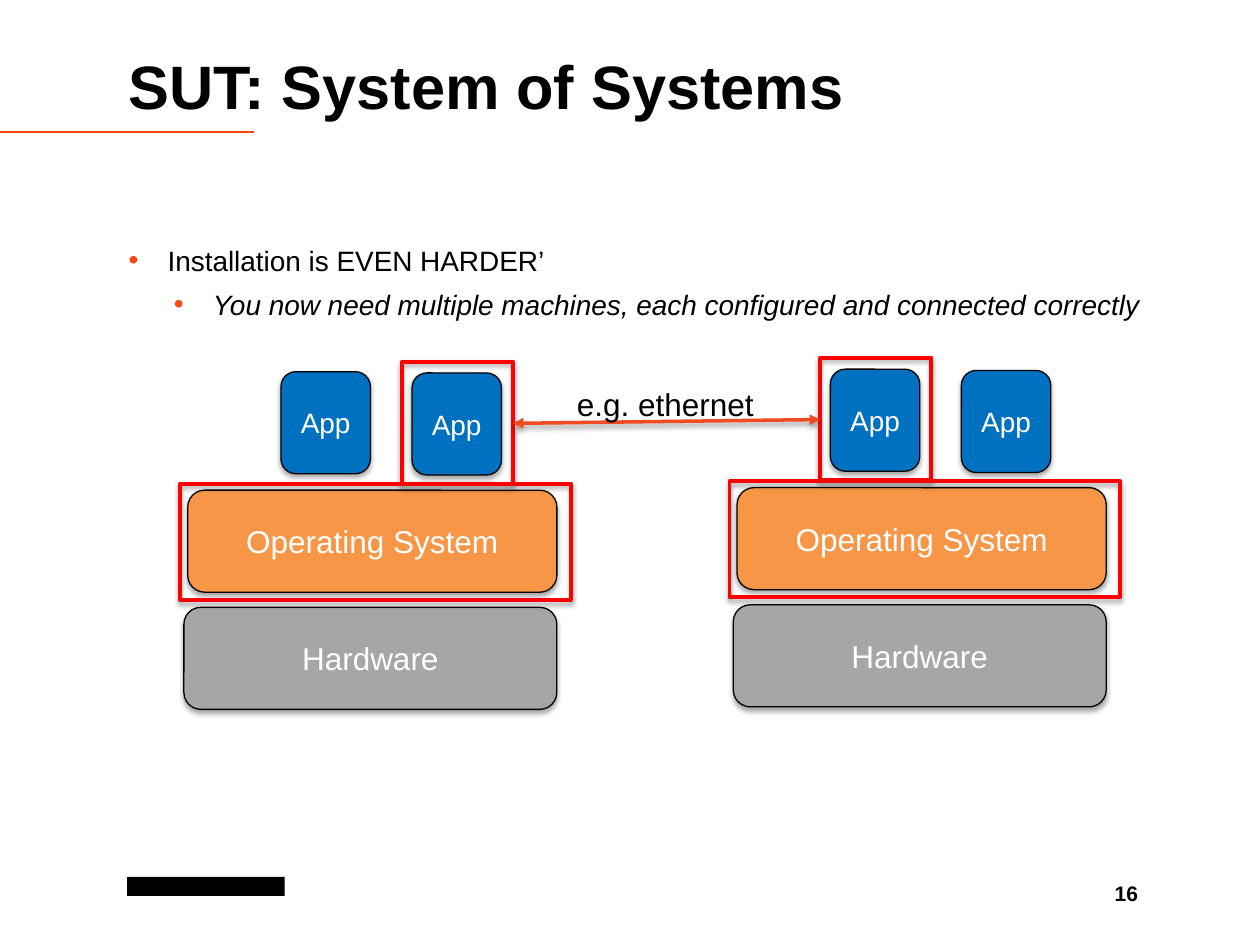
from lxml.etree import SubElement
from pptx import Presentation
from pptx.dml.color import RGBColor
from pptx.enum.shapes import MSO_CONNECTOR, MSO_SHAPE
from pptx.enum.text import MSO_ANCHOR, MSO_AUTO_SIZE, PP_ALIGN
from pptx.oxml.ns import qn
from pptx.util import Inches, Pt

FONT = "Arial"
BLACK = RGBColor(0x00, 0x00, 0x00)
WHITE = RGBColor(0xFF, 0xFF, 0xFF)
GRAY = RGBColor(0xA6, 0xA6, 0xA6)
AMBER = RGBColor(0xF7, 0x96, 0x46)
BLUE = RGBColor(0x00, 0x70, 0xC0)
RED = RGBColor(0xFF, 0x00, 0x00)
RULE = RGBColor(0xFF, 0x46, 0x12)
LINK = RGBColor(0xF0, 0x4B, 0x23)


def place(shape, x, y, w, h):
    shape.left, shape.top = Inches(x), Inches(y)
    shape.width, shape.height = Inches(w), Inches(h)


def style(para, size, color=BLACK, bold=False, italic=False):
    for run in para.runs:
        font = run.font
        font.name, font.size = FONT, Pt(size)
        font.bold, font.italic = bold, italic
        font.color.rgb = color


def inset(frame, left, top, right, bottom):
    frame.margin_left, frame.margin_top = Inches(left), Inches(top)
    frame.margin_right, frame.margin_bottom = Inches(right), Inches(bottom)


def shade(shape, alpha=35):
    """Soft shadow straight below the shape."""
    effects = SubElement(shape._element.spPr, qn("a:effectLst"))
    outer = SubElement(effects, qn("a:outerShdw"), blurRad=str(Pt(3.1)),
                       dist=str(Pt(1.8)), dir="5400000", rotWithShape="0")
    tone = SubElement(outer, qn("a:srgbClr"), val=str(BLACK))
    SubElement(tone, qn("a:alpha"), val=str(alpha * 1000))


def add_block(slide, text, x, y, w, h, fill, size=18):
    block = slide.shapes.add_shape(
        MSO_SHAPE.ROUNDED_RECTANGLE, Inches(x), Inches(y), Inches(w), Inches(h))
    block.fill.solid()
    block.fill.fore_color.rgb = fill
    block.line.color.rgb = BLACK
    block.line.width = Pt(0.75)
    shade(block)
    frame = block.text_frame
    frame.text = text
    frame.vertical_anchor = MSO_ANCHOR.MIDDLE
    para = frame.paragraphs[0]
    para.alignment = PP_ALIGN.CENTER
    style(para, size, WHITE)


def add_frame(slide, x, y, w, h):
    box = slide.shapes.add_shape(
        MSO_SHAPE.RECTANGLE, Inches(x), Inches(y), Inches(w), Inches(h))
    box.fill.background()
    box.line.color.rgb = RED
    box.line.width = Pt(2.25)
    shade(box)


def add_line(slide, x1, y1, x2, y2, color, width):
    line = slide.shapes.add_connector(
        MSO_CONNECTOR.STRAIGHT, Inches(x1), Inches(y1), Inches(x2), Inches(y2))
    line.line.color.rgb = color
    line.line.width = Pt(width)
    return line


def add_link(slide, x1, y1, x2, y2):
    link = add_line(slide, x1, y1, x2, y2, LINK, 2)
    stroke = link.line._get_or_add_ln()
    for end in ("a:headEnd", "a:tailEnd"):
        SubElement(stroke, qn(end), type="triangle")
    shade(link, 38)


def add_label(slide, text, x, y, w, h, size, bold=False, wrap=False):
    box = slide.shapes.add_textbox(Inches(x), Inches(y), Inches(w), Inches(h))
    frame = box.text_frame
    frame.word_wrap = wrap
    frame.text = text
    style(frame.paragraphs[0], size, bold=bold)
    return frame


def add_host(slide, x, y, marked):
    """One machine; marked is the index of the framed app."""
    add_block(slide, "Hardware", x, y + 1.87, 2.96, 0.81, GRAY)
    add_block(slide, "Operating System", x + 0.03, y + 0.94, 2.93, 0.81, AMBER)
    for i in range(2):
        left, top = x + 0.77 + 1.04 * i, y + 0.01 * i
        if i == marked:
            add_frame(slide, left - 0.08, top - 0.09, 0.88, 0.97)
        add_block(slide, "App", left, top, 0.71, 0.81, BLUE, 16)
    add_frame(slide, x - 0.03, y + 0.89, 3.1, 0.92)


def set_title(slide, text):
    title = slide.shapes.title
    place(title, 1.02, 0.05, 8.49, 1.25)
    frame = title.text_frame
    frame.text = text
    frame.auto_size = MSO_AUTO_SIZE.NONE
    frame.vertical_anchor = MSO_ANCHOR.MIDDLE
    inset(frame, 0, 0.05, 0.1, 0.05)
    para = frame.paragraphs[0]
    para.alignment = PP_ALIGN.LEFT
    style(para, 35, bold=True)


def set_list(slide, items):
    body = slide.placeholders[1]
    place(body, 1.02, 1.88, 8.49, 4.36)
    frame = body.text_frame
    frame.text = "\n".join(items)
    frame.auto_size = MSO_AUTO_SIZE.NONE
    inset(frame, 0, 0.05, 0.1, 0.05)
    for level, para in enumerate(frame.paragraphs):
        para.level = level
        para.space_before = Pt(6)
        style(para, 16, italic=level > 0)
        props = para._p.get_or_add_pPr()
        props.set("marL", str(Inches(0.31 + 0.36 * level)))
        props.set("indent", str(Inches(-0.31)))
        color = SubElement(props, qn("a:buClr"))
        SubElement(color, qn("a:srgbClr"), val=str(RULE))
        SubElement(props, qn("a:buFont"), typeface=FONT)
        SubElement(props, qn("a:buChar"), char="•")


def add_mark(slide):
    """Plain bar in the footer."""
    bar = slide.shapes.add_shape(
        MSO_SHAPE.RECTANGLE, Inches(1.01), Inches(6.96), Inches(1.25), Inches(0.15))
    bar.shadow.inherit = False
    bar.fill.solid()
    bar.fill.fore_color.rgb = BLACK
    bar.line.fill.background()


def main():
    deck = Presentation()
    deck.slide_width, deck.slide_height = Inches(10), Inches(7.5)
    slide = deck.slides.add_slide(deck.slide_layouts[1])

    # Heading, rule and list
    set_title(slide, "SUT: System of Systems")
    rule = add_line(slide, 0, 1.05, 2.02, 1.05, RULE, 1)
    SubElement(rule._element.spPr, qn("a:effectLst"))
    set_list(slide, [
        "Installation is EVEN HARDER’",
        "You now need multiple machines, each configured and connected correctly",
    ])

    # Footer
    add_mark(slide)
    page = add_label(slide, "16", 8.62, 6.94, 0.51, 0.4, 12, bold=True, wrap=True)
    inset(page, 0.1, 0.05, 0.1, 0)
    page.paragraphs[0].alignment = PP_ALIGN.RIGHT

    # Two machines and the link between their framed apps
    add_host(slide, 1.46, 2.95, marked=1)
    add_host(slide, 5.82, 2.93, marked=0)
    add_link(slide, 4.07, 3.36, 6.51, 3.33)
    add_label(slide, "e.g. ethernet", 4.48, 3.01, 1.62, 0.4, 18)

    deck.save("out.pptx")


if __name__ == "__main__":
    main()
